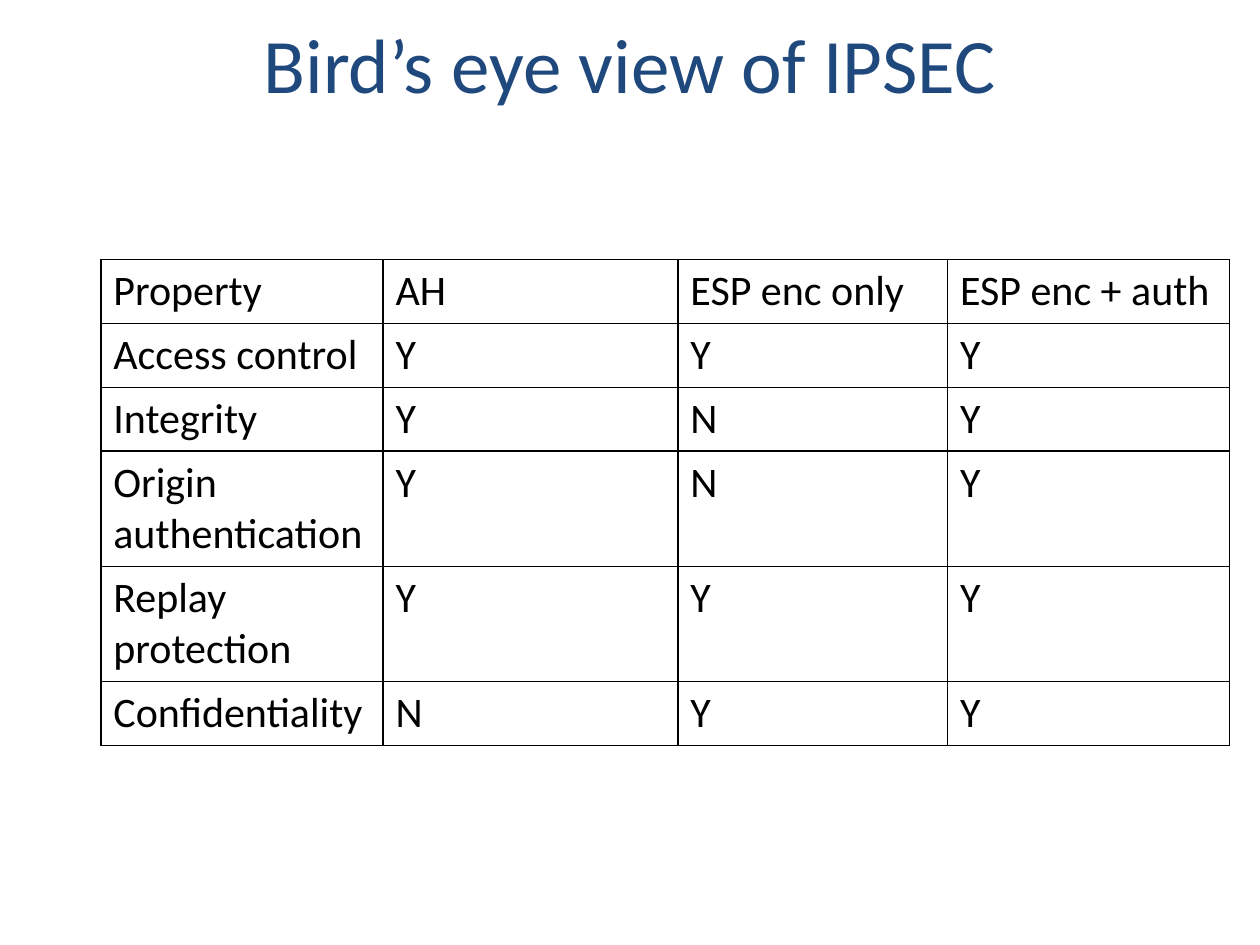
from lxml.etree import SubElement
from pptx import Presentation
from pptx.dml.color import RGBColor
from pptx.enum.text import MSO_ANCHOR as Anchor, PP_ALIGN as Align
from pptx.oxml.ns import qn
from pptx.util import Inches, Pt

ROWS = [
    ("Property", "AH", "ESP enc only", "ESP enc + auth"),
    ("Access control", "Y", "Y", "Y"),
    ("Integrity", "Y", "N", "Y"),
    ("Origin\nauthentication", "Y", "N", "Y"),
    ("Replay protection", "Y", "Y", "Y"),
    ("Confidentiality", "N", "Y", "Y"),
]
COLUMN_WIDTHS = (2.24, 2.34, 2.14, 2.24)
ROW_HEIGHTS = (0.5, 0.5, 0.5, 0.91, 0.91, 0.5)


def color(value):
    """Turn a hex string into a colour."""
    return RGBColor.from_string(value)


def set_text(frame, text, size, fill):
    """Write text into a frame and format its runs."""
    frame.text = text
    for para in frame.paragraphs:
        for span in para.runs:
            span.font.name = "Calibri"
            span.font.size = Pt(size)
            span.font.color.rgb = color(fill)


def add_borders(cell, fill, width):
    """Draw a solid line on all four sides of a cell."""
    properties = cell._tc.get_or_add_tcPr()
    for index, side in enumerate(("a:lnL", "a:lnR", "a:lnT", "a:lnB")):
        line = properties.makeelement(qn(side), {"w": str(Pt(width))})
        solid = SubElement(line, qn("a:solidFill"))
        SubElement(solid, qn("a:srgbClr"), val=fill)
        properties.insert(index, line)


def place_title(page, left, top, width, height):
    """Fill the title placeholder and fit it to its box."""
    title = page.shapes.title
    title.left, title.top = Inches(left), Inches(top)
    title.width, title.height = Inches(width), Inches(height)
    set_text(title.text_frame, "Bird’s eye view of IPSEC", 44, "1F497D")
    title.text_frame.vertical_anchor = Anchor.MIDDLE
    title.text_frame.paragraphs[0].alignment = Align.CENTER


def place_table(page, left, top):
    """Add the table of properties with its corner at the given point."""
    table = page.shapes.add_table(
        len(ROWS), len(COLUMN_WIDTHS), Inches(left), Inches(top),
        Inches(sum(COLUMN_WIDTHS)), Inches(sum(ROW_HEIGHTS))).table
    table.first_row = table.horz_banding = False
    for column, width in zip(table.columns, COLUMN_WIDTHS):
        column.width = Inches(width)
    for row, height, texts in zip(table.rows, ROW_HEIGHTS, ROWS):
        row.height = Inches(height)
        for cell, text in zip(row.cells, texts):
            set_text(cell.text_frame, text, 24, "000000")
            cell.fill.background()
            add_borders(cell, "000000", 1)


def main():
    """Build the slide and save the deck."""
    deck = Presentation()
    deck.slide_width, deck.slide_height = Inches(10), Inches(7.5)
    page = deck.slides.add_slide(deck.slide_layouts[5])
    place_title(page, 0.5, 0, 9, 1)
    place_table(page, 0.8, 2.06)
    deck.save("out.pptx")


if __name__ == "__main__":
    main()
